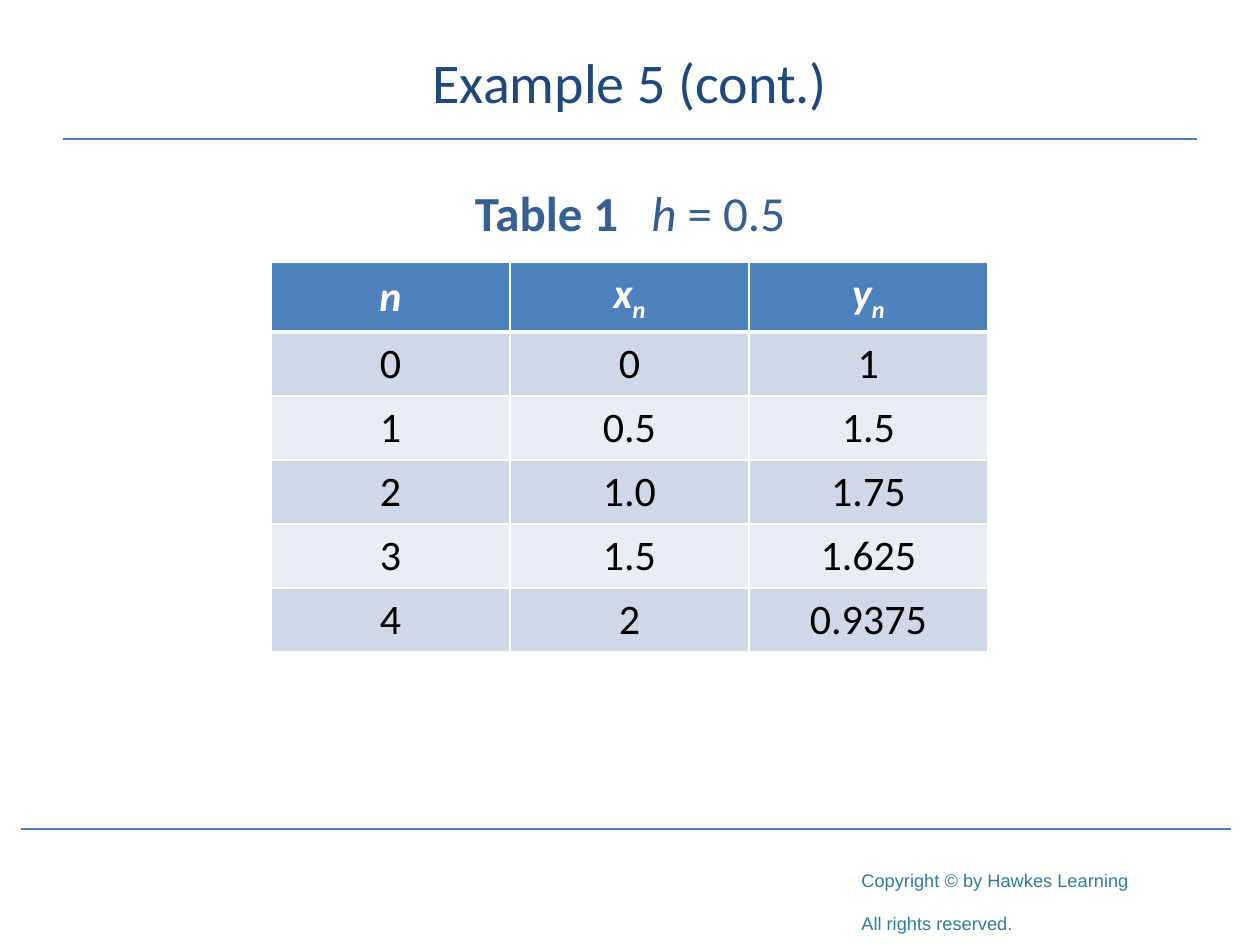
from lxml import etree
from pptx import Presentation
from pptx.dml.color import RGBColor
from pptx.enum.shapes import MSO_CONNECTOR
from pptx.enum.text import MSO_ANCHOR, PP_ALIGN
from pptx.oxml.ns import qn
from pptx.util import Emu, Pt

STRAIGHT = MSO_CONNECTOR.STRAIGHT
CENTER = PP_ALIGN.CENTER
MIDDLE = MSO_ANCHOR.MIDDLE

NAVY = RGBColor(0x1F, 0x49, 0x7D)
CAPTION_BLUE = RGBColor(0x36, 0x60, 0x92)
RULE_BLUE = RGBColor(0x4B, 0x7E, 0xBC)
HEADER_BLUE = RGBColor(0x4F, 0x81, 0xBD)
TEAL = RGBColor(0x2D, 0x7D, 0x9F)
DARK_BAND = RGBColor(0xD0, 0xD8, 0xE8)
LIGHT_BAND = RGBColor(0xE9, 0xED, 0xF4)
WHITE = RGBColor(0xFF, 0xFF, 0xFF)
BLACK = RGBColor(0x00, 0x00, 0x00)


def px(*lengths):
    return [Emu(round(length * 914400 / 126)) for length in lengths]


def add_run(paragraph, text, size, color, bold=False, italic=False,
            font="Calibri", subscript=False):
    run = paragraph.add_run()
    run.text = text
    run.font.size = Pt(size)
    run.font.name = font
    run.font.bold = bold
    run.font.italic = italic
    run.font.color.rgb = color
    if subscript:
        run.font._element.set("baseline", "-25000")
    return run


prs = Presentation()
prs.slide_width, prs.slide_height = px(1260, 945)
slide = prs.slides.add_slide(prs.slide_layouts[5])

for left, right, y in [(63, 1197, 139), (21, 1231, 829)]:
    rule = slide.shapes.add_connector(STRAIGHT, *px(left, y, right, y))
    rule.line.color.rgb = RULE_BLUE
    rule.line.width = Pt(1.25)
    etree.SubElement(rule._element.spPr, qn("a:effectLst"))

rights = slide.shapes.add_textbox(*px(849, 842, 388, 94)).text_frame
rights.word_wrap = True
for index, line in enumerate(["Copyright © by Hawkes Learning", "All rights reserved."]):
    paragraph = rights.add_paragraph() if index else rights.paragraphs[0]
    add_run(paragraph, line, 18, TEAL, font="Arial", subscript=True)

title = slide.shapes.title
title.left, title.top, title.width, title.height = px(63, 25, 1134, 126)
title.text_frame.vertical_anchor = MIDDLE
heading = title.text_frame.paragraphs[0]
heading.alignment = CENTER
heading.line_spacing = Pt(30)
add_run(heading, "Example 5 (cont.)", 32, NAVY)

caption_frame = slide.shapes.add_textbox(*px(63, 176, 1134, 76)).text_frame
caption_frame.word_wrap = True
caption = caption_frame.paragraphs[0]
caption.alignment = CENTER
add_run(caption, "Table 1", 28, CAPTION_BLUE, bold=True)
gap = add_run(caption, " ", 28, CAPTION_BLUE, bold=True)
gap.font._element.set("spc", "1260")
add_run(caption, "h", 28, CAPTION_BLUE, italic=True)
add_run(caption, " = 0.5", 28, CAPTION_BLUE)

header = [("n", ""), ("x", "n"), ("y", "n")]
steps = [
    ("0", "0", "1"),
    ("1", "0.5", "1.5"),
    ("2", "1.0", "1.75"),
    ("3", "1.5", "1.625"),
    ("4", "2", "0.9375"),
]
values = slide.shapes.add_table(6, 3, *px(271, 262, 717, 388)).table
for column in values.columns:
    column.width = px(239)[0]
for r, row in enumerate(values.rows):
    row.height = px(64 if r else 68)[0]
    for c, cell in enumerate(row.cells):
        for side in "LRTB":
            thick = (r, side) in [(0, "B"), (1, "T")]
            border = etree.SubElement(cell._tc.get_or_add_tcPr(), qn(f"a:ln{side}"),
                                      w=str(Pt(3 if thick else 1)))
            border_fill = etree.SubElement(border, qn("a:solidFill"))
            etree.SubElement(border_fill, qn("a:srgbClr"), val=str(WHITE))
        cell.fill.solid()
        cell.vertical_anchor = MIDDLE
        entry = cell.text_frame.paragraphs[0]
        entry.alignment = CENTER
        if r:
            cell.fill.fore_color.rgb = DARK_BAND if r % 2 else LIGHT_BAND
            add_run(entry, steps[r - 1][c], 24, BLACK)
        else:
            cell.fill.fore_color.rgb = HEADER_BLUE
            symbol, index = header[c]
            add_run(entry, symbol, 24, WHITE, bold=True, italic=True)
            if index:
                add_run(entry, index, 24, WHITE, bold=True, italic=True, subscript=True)

prs.save("out.pptx")
